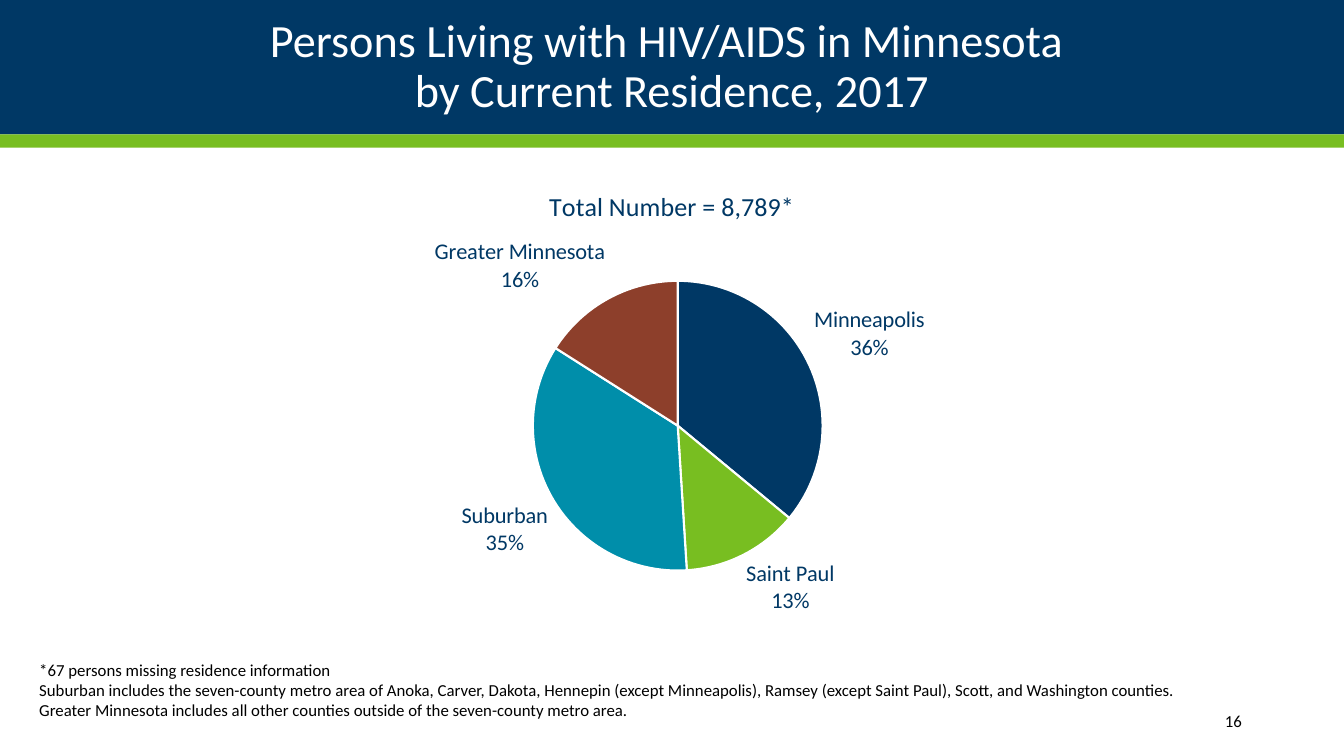
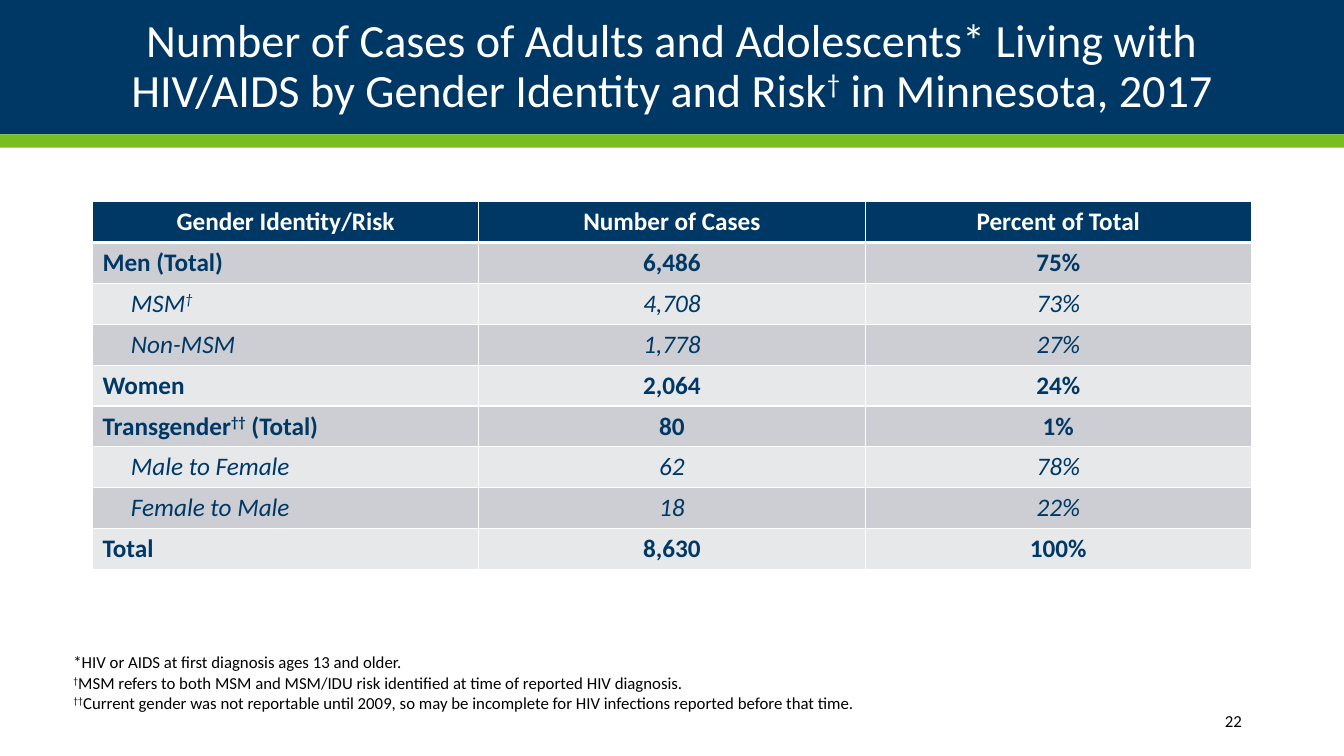
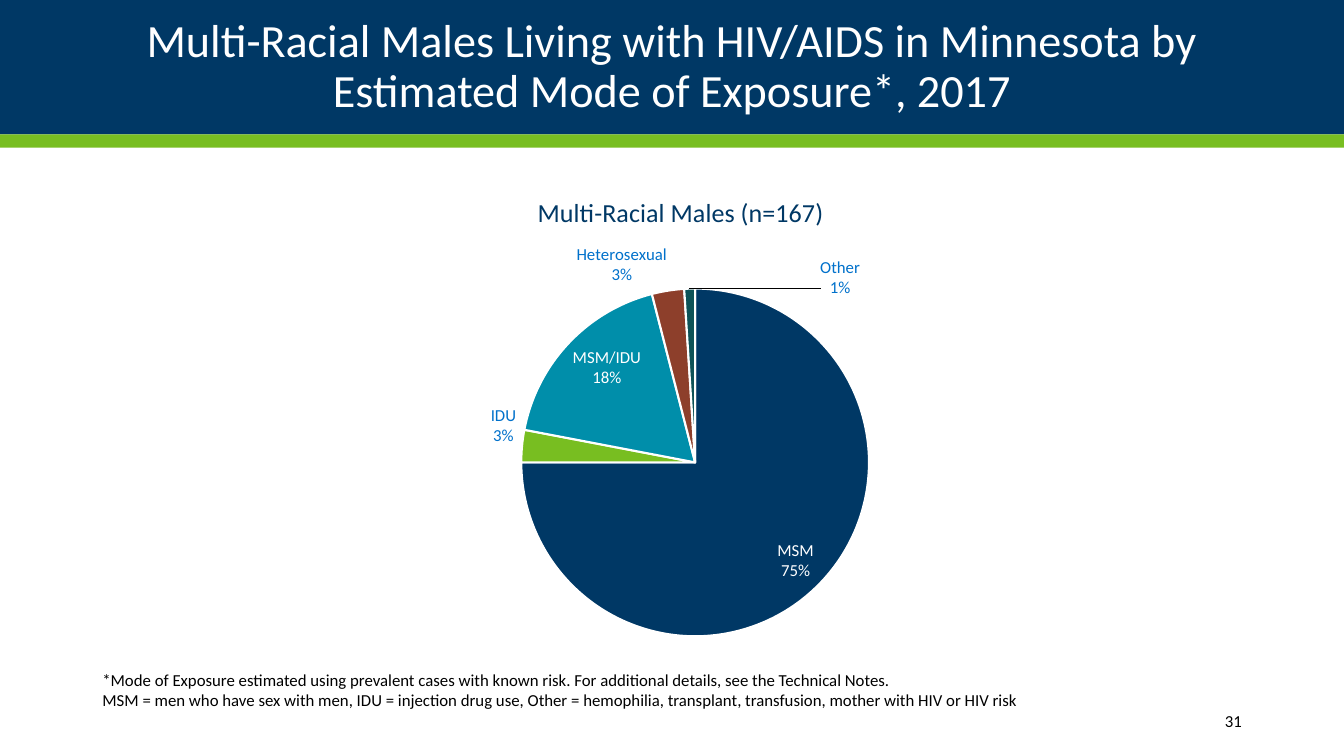
"""Build three slides on persons living with HIV/AIDS in Minnesota."""
from itertools import groupby

from lxml import etree
from pptx import Presentation
from pptx.chart.data import CategoryChartData
from pptx.dml.color import RGBColor
from pptx.enum.chart import XL_CHART_TYPE, XL_LABEL_POSITION
from pptx.enum.shapes import MSO_SHAPE
from pptx.enum.text import MSO_ANCHOR, MSO_AUTO_SIZE, PP_ALIGN
from pptx.oxml.ns import qn
from pptx.util import Cm, Pt

PIE = XL_CHART_TYPE.PIE
OUTSIDE, INSIDE = XL_LABEL_POSITION.OUTSIDE_END, XL_LABEL_POSITION.INSIDE_END
RECTANGLE = MSO_SHAPE.RECTANGLE
MIDDLE, NO_FIT = MSO_ANCHOR.MIDDLE, MSO_AUTO_SIZE.NONE
LEFT, CENTER, RIGHT = PP_ALIGN.LEFT, PP_ALIGN.CENTER, PP_ALIGN.RIGHT

COLORS = {
    "navy": "003865", "green": "78BE21", "teal": "008EAA", "brown": "8D3F2B",
    "dark teal": "0D5257", "blue": "0071CB", "white": "FFFFFF", "black": "000000",
    "dark band": "CCCED3", "light band": "E7E8EA",
}
SLICES = ("navy", "green", "teal", "brown", "dark teal")
FONT = "Calibri"
WIDTH, HEIGHT = Cm(33.87), Cm(19.05)
MARGIN, CONTENT_WIDTH = Cm(2.33), Cm(29.21)


def color(name):
    return RGBColor.from_string(COLORS[name])


def style(font, size, name, bold=False, italic=False):
    font.name, font.size, font.bold, font.italic = FONT, Pt(size), bold, italic
    font.color.rgb = color(name)


def add_child(parent, tag, value):
    child = etree.SubElement(parent, qn(tag))
    child.set("val", str(value))
    return child


def set_layout(parent, index, **values):
    for old in parent.findall(qn("c:layout")):
        parent.remove(old)
    layout = etree.Element(qn("c:layout"))
    manual = etree.SubElement(layout, qn("c:manualLayout"))
    for key, value in values.items():
        add_child(manual, f"c:{key}", value)
    parent.insert(index, layout)


def set_borders(cell, bottom):
    properties = cell._tc.get_or_add_tcPr()
    for index, (side, points) in enumerate((("L", 1), ("R", 1), ("T", 1), ("B", bottom))):
        line = etree.Element(qn(f"a:ln{side}"), w=str(Pt(points)))
        fill = etree.SubElement(line, qn("a:solidFill"))
        add_child(fill, "a:srgbClr", COLORS["white"])
        properties.insert(index, line)


class Deck:
    """Hold the shared style and the current slide."""

    def __init__(self):
        self.presentation = Presentation()
        self.presentation.slide_width, self.presentation.slide_height = WIDTH, HEIGHT
        self.layout = self.presentation.slide_layouts[5]
        self.slide = None

    def add_slide(self, title, number):
        self.slide = self.presentation.slides.add_slide(self.layout)
        if number == 16:
            self.add_bands()
        shape = self.slide.shapes.title
        shape.left, shape.top, shape.width, shape.height = MARGIN, Cm(0.43), CONTENT_WIDTH, Cm(2.54)
        self.fill_frame(shape.text_frame, [title], 33, "white", CENTER)
        shape.text_frame.paragraphs[0].line_spacing = 0.9
        self.add_text([str(number)], Cm(27.49), Cm(17.65), Cm(4.06), Cm(1.02), RIGHT)

    def add_bands(self):
        bands = (("navy", 0, Cm(3.39)), ("green", Cm(3.39), Cm(0.33)))
        for index, (name, top, height) in enumerate(bands):
            band = self.slide.shapes.add_shape(RECTANGLE, 0, top, WIDTH, height)
            band.shadow.inherit = False
            band.fill.solid()
            band.fill.fore_color.rgb = color(name)
            band.line.fill.background()
            self.layout.shapes.element.insert(2 + index, band.element)

    def fill_paragraph(self, paragraph, text, size, name, alignment, bold=False, italic=False):
        paragraph.alignment = alignment
        style(paragraph.font, size, name, bold, italic)
        for index, line in enumerate(text.split("\n")):
            if index:
                paragraph.add_line_break()
            for raised, letters in groupby(line, lambda letter: letter == "†"):
                run = paragraph.add_run()
                run.text = "".join(letters)
                if raised:
                    run._r.get_or_add_rPr().set("baseline", "30000")

    def fill_frame(self, frame, texts, size, name, alignment):
        frame.word_wrap = True
        frame.auto_size = NO_FIT
        frame.vertical_anchor = MIDDLE
        for index, text in enumerate(texts):
            paragraph = frame.add_paragraph() if index else frame.paragraphs[0]
            self.fill_paragraph(paragraph, text, size, name, alignment)

    def add_text(self, texts, left, top, width, height, alignment=LEFT):
        box = self.slide.shapes.add_textbox(left, top, width, height)
        self.fill_frame(box.text_frame, texts, 12, "black", alignment)

    def add_notes(self, texts, left, top, height):
        self.add_text(texts, left, top, CONTENT_WIDTH, height)

    def add_pie(self, title, values, top, height, title_at, plot_at, label_size, label_color, inside=()):
        data = CategoryChartData()
        data.categories = list(values)
        data.add_series(title, list(values.values()))
        chart = self.slide.shapes.add_chart(PIE, MARGIN, top, CONTENT_WIDTH, height, data).chart
        chart.has_legend = False
        style(chart.font, 10, "navy")
        chart.has_title = True
        frame = chart.chart_title.text_frame
        frame.text = title
        style(frame.paragraphs[0].runs[0].font, 18.6, "navy")
        x, y = title_at
        set_layout(chart.chart_title.element if hasattr(chart.chart_title, "element")
                   else chart.chart_title._element, 1, xMode="edge", yMode="edge", x=x, y=y)
        x, y, w, h = plot_at
        set_layout(chart.element.xpath(".//c:plotArea")[0], 0, layoutTarget="inner",
                   xMode="edge", yMode="edge", x=x, y=y, w=w, h=h)
        plot = chart.plots[0]
        plot.vary_by_categories = True
        self.label_pie(plot.series[0], values, label_size, label_color, inside)
        return chart

    def label_pie(self, series, values, size, name, inside):
        labels = series.data_labels
        labels.number_format, labels.number_format_is_linked = "0%", False
        labels.position = OUTSIDE
        style(labels.font, size, name)
        for index, category in enumerate(values):
            point = series.points[index]
            point.format.fill.solid()
            point.format.fill.fore_color.rgb = color(SLICES[index])
            point.format.line.color.rgb = color("white")
            point.format.line.width = Pt(1.5)
            if category in inside:
                style(point.data_label.font, size, "white")
                point.data_label.position = INSIDE
            elif category == "Other":
                style(point.data_label.font, size, name)
                point.data_label.position = OUTSIDE
                set_layout(point.data_label._get_or_add_dLbl(), 1, x=0.13, y=0.03)
        for label in series._element.xpath(".//c:dLbls | .//c:dLbl"):
            for tag, shown in (("showVal", 0), ("showCatName", 1), ("showPercent", 1)):
                label.find(qn(f"c:{tag}")).set("val", str(shown))
            separator = etree.Element(qn("c:separator"))
            separator.text = "\n"
            label.find(qn("c:showBubbleSize")).addnext(separator)

    def add_table(self, header, rows, top, row_height):
        count = len(rows) + 1
        table = self.slide.shapes.add_table(
            count, len(header), MARGIN, top, CONTENT_WIDTH, row_height * count).table
        for row_index, texts in enumerate([header, *rows]):
            is_header = row_index == 0
            is_part = texts[0] in ("MSM†", "Non-MSM", "Male to Female", "Female to Male")
            band = "navy" if is_header else ("light band", "dark band")[row_index % 2]
            for column, text in enumerate(texts):
                cell = table.cell(row_index, column)
                cell.fill.solid()
                cell.fill.fore_color.rgb = color(band)
                set_borders(cell, 3 if is_header else 1)
                if is_part and column == 0:
                    cell.margin_left = Cm(0.97)
                self.fill_paragraph(
                    cell.text_frame.paragraphs[0], text, 18, "white" if is_header else "navy",
                    CENTER if is_header or column else LEFT, bold=not is_part, italic=is_part)


def main():
    deck = Deck()

    deck.add_slide("Persons Living with HIV/AIDS in Minnesota \nby Current Residence, 2017", 16)
    deck.add_pie(
        "Total Number = 8,789*",
        {"Minneapolis": 36, "Saint Paul": 13, "Suburban": 35, "Greater Minnesota": 16},
        Cm(4.02), Cm(12.09), (0.39, 0.05), (0.38, 0.25, 0.25, 0.61), 16, "navy")
    deck.add_notes([
        "*67 persons missing residence information",
        "Suburban includes the seven-county metro area of Anoka, Carver, Dakota, Hennepin "
        "(except Minneapolis), Ramsey (except Saint Paul), Scott, and Washington counties. "
        "Greater Minnesota includes all other counties outside of the seven-county metro area.",
    ], Cm(0.74), Cm(16.1), Cm(2.57))

    deck.add_slide("Number of Cases of Adults and Adolescents* Living with HIV/AIDS "
                   "by Gender Identity and Risk† in Minnesota, 2017", 22)
    deck.add_table(
        ("Gender Identity/Risk", "Number of Cases", "Percent of Total"),
        [
            ("Men (Total)", "6,486", "75%"),
            ("MSM†", "4,708", "73%"),
            ("Non-MSM", "1,778", "27%"),
            ("Women", "2,064", "24%"),
            ("Transgender†† (Total)", "80", "1%"),
            ("Male to Female", "62", "78%"),
            ("Female to Male", "18", "22%"),
            ("Total", "8,630", "100%"),
        ], Cm(5.08), Cm(1.03))
    deck.add_notes([
        "*HIV or AIDS at first diagnosis ages 13 and older.",
        "†MSM refers to both MSM and MSM/IDU risk identified at time of reported HIV diagnosis.",
        "††Current gender was not reportable until 2009, so may be incomplete for HIV infections "
        "reported before that time.",
    ], Cm(1.6), Cm(15.72), Cm(2.95))

    deck.add_slide("Multi-Racial Males Living with HIV/AIDS in Minnesota by "
                   "Estimated Mode of Exposure*, 2017", 31)
    deck.add_pie(
        "Multi-Racial Males (n=167)",
        {"MSM": 75, "IDU": 3, "MSM/IDU": 18, "Heterosexual": 3, "Other": 1},
        Cm(4.17), Cm(12.27), (0.38, 0.05), (0.37, 0.25, 0.3, 0.72), 12, "blue",
        inside=("MSM", "MSM/IDU"))
    deck.add_notes([
        "*Mode of Exposure estimated using prevalent cases with known risk. "
        "For additional details, see the Technical Notes.",
        "MSM = men who have sex with men, IDU = injection drug use, Other = hemophilia, "
        "transplant, transfusion, mother with HIV or HIV risk",
    ], Cm(2.33), Cm(16.43), Cm(1.9))

    deck.presentation.save("out.pptx")


if __name__ == "__main__":
    main()
